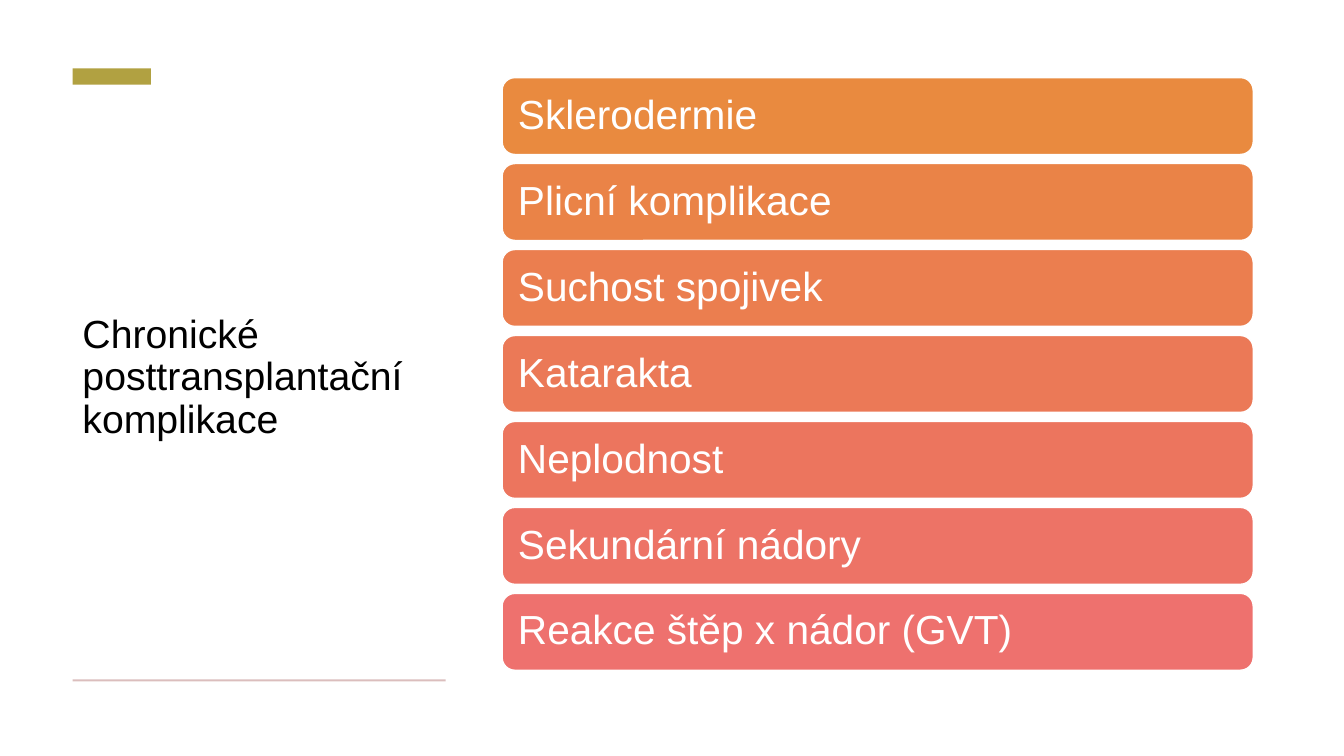
import pptx
import pptx.dml.color
import pptx.enum.shapes
import pptx.enum.text
import pptx.util

SHAPES = pptx.enum.shapes.MSO_SHAPE
SLIDE_WIDTH, SLIDE_HEIGHT = 13.33, 7.5
FONT = "Arial"
WHITE, BLACK = "FFFFFF", "000000"
ACCENT, RULE = "B1A141", "DBBEBD"
TITLE = "Chronické posttransplantační komplikace"
COMPLICATIONS = [
    ("Sklerodermie", "E98A3F"),
    ("Plicní komplikace", "EA8347"),
    ("Suchost spojivek", "EB7E4F"),
    ("Katarakta", "EB7957"),
    ("Neplodnost", "EC755E"),
    ("Sekundární nádory", "ED7366"),
    ("Reakce štěp x nádor (GVT)", "EE716E"),
]


def color(hex_code):
    return pptx.dml.color.RGBColor.from_string(hex_code)


def inches(*lengths):
    return [pptx.util.Inches(length) for length in lengths]


def write(holder, text, size, ink, inset_x=0.1, inset_y=0.05):
    """Fill a shape or text box with one left-aligned, vertically centred paragraph."""
    frame = holder.text_frame
    frame.word_wrap = True
    frame.vertical_anchor = pptx.enum.text.MSO_ANCHOR.MIDDLE
    frame.margin_left, frame.margin_right = inches(inset_x, inset_x)
    frame.margin_top, frame.margin_bottom = inches(inset_y, inset_y)
    paragraph = frame.paragraphs[0]
    paragraph.alignment = pptx.enum.text.PP_ALIGN.LEFT
    paragraph.line_spacing = 0.9
    run = paragraph.add_run()
    run.text = text
    run.font.name = FONT
    run.font.size = pptx.util.Pt(size)
    run.font.color.rgb = color(ink)


def add_block(slide, preset, box, fill, outline=None):
    block = slide.shapes.add_shape(preset, *inches(*box))
    block.shadow.inherit = False
    block.fill.solid()
    block.fill.fore_color.rgb = color(fill)
    if outline:
        block.line.color.rgb = color(outline)
        block.line.width = pptx.util.Pt(1)
    else:
        block.line.fill.background()
    return block


def add_title_panel(slide, left, top, width, height):
    """Accent bar at the top, title in the middle, thin rule at the bottom."""
    title_top, title_height = top + 0.06 * height, 0.89 * height
    title = slide.shapes.add_textbox(*inches(left, title_top, width, title_height))
    write(title, TITLE, size=28, ink=BLACK)
    add_block(slide, SHAPES.RECTANGLE, (left, top, 0.21 * width, 0.16), ACCENT)
    add_block(slide, SHAPES.RECTANGLE,
              (left, top + height - 0.02, width, 0.02), RULE)


def add_complication_list(slide, left, top, width, height, gap=0.09):
    """Equal rounded bars stacked to fill the given box."""
    count = len(COMPLICATIONS)
    bar_height = (height - gap * (count - 1)) / count
    for row, (name, fill) in enumerate(COMPLICATIONS):
        bar_top = top + row * (bar_height + gap)
        bar = add_block(slide, SHAPES.ROUNDED_RECTANGLE,
                        (left, bar_top, width, bar_height), fill, outline=WHITE)
        write(bar, name, size=29, ink=WHITE, inset_x=0.12, inset_y=0.12)


def main():
    deck = pptx.Presentation()
    deck.slide_width, deck.slide_height = inches(SLIDE_WIDTH, SLIDE_HEIGHT)
    slide = deck.slides.add_slide(deck.slide_layouts[6])
    slide.background.fill.solid()
    slide.background.fill.fore_color.rgb = color(WHITE)
    add_title_panel(slide, left=0.72, top=0.68, width=3.7, height=6.08)
    add_complication_list(slide, left=4.98, top=0.77, width=7.45, height=5.88)
    deck.save("out.pptx")


if __name__ == "__main__":
    main()
